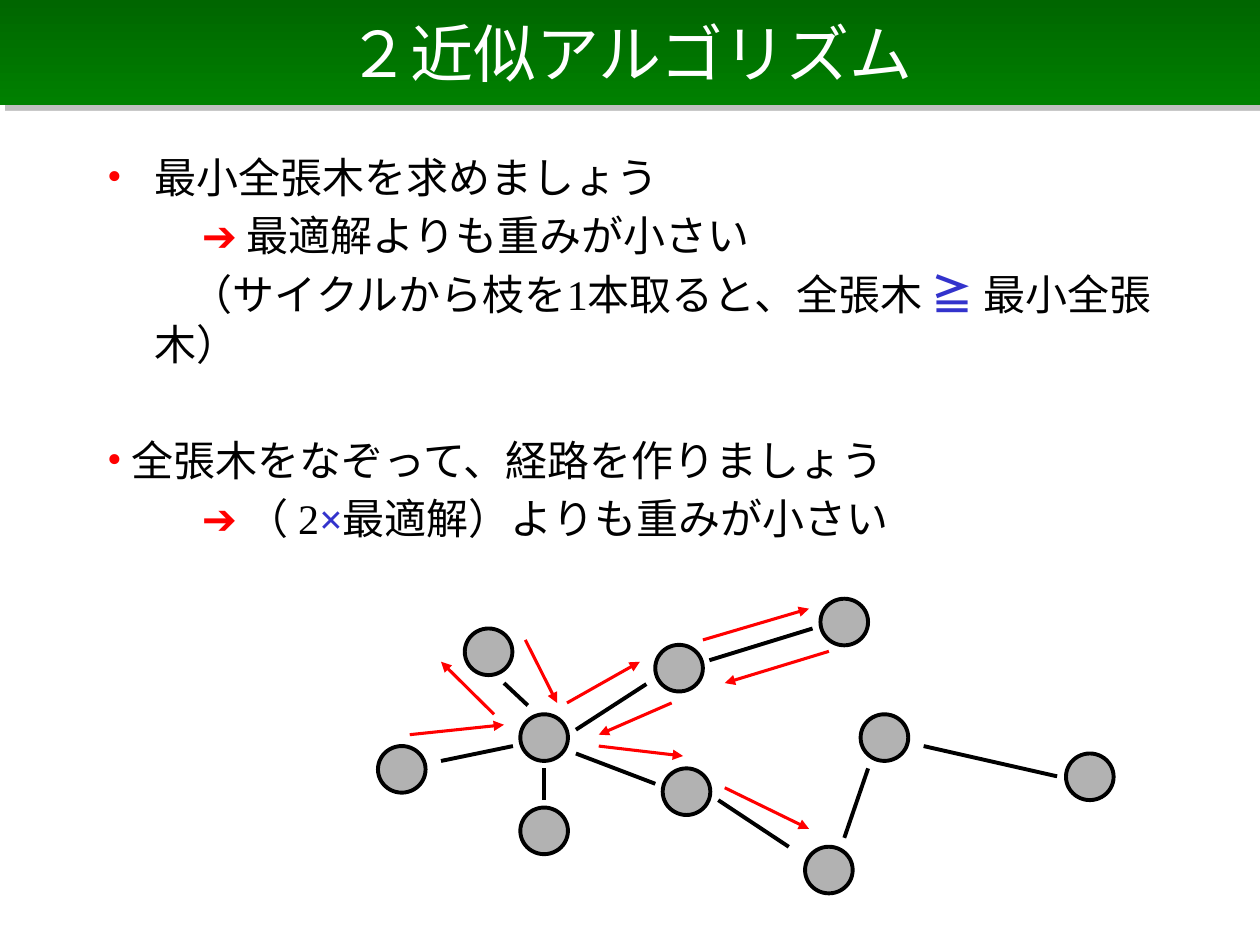
"""Build the slide explaining the 2-approximation by walking a minimum spanning tree."""
from dataclasses import dataclass

from lxml.etree import SubElement
from pptx import Presentation
from pptx.dml.color import RGBColor
from pptx.enum.shapes import MSO_CONNECTOR as Connector, MSO_SHAPE as Shape
from pptx.enum.text import MSO_ANCHOR as Anchor, PP_ALIGN as Align
from pptx.oxml.ns import qn
from pptx.util import Cm, Pt


@dataclass(frozen=True)
class Theme:
    font: str = "Times New Roman"
    title_size: float = 36
    body_size: float = 24
    white: RGBColor = RGBColor(0xFF, 0xFF, 0xFF)
    black: RGBColor = RGBColor(0, 0, 0)
    red: RGBColor = RGBColor(0xFF, 0, 0)
    blue: RGBColor = RGBColor(0x33, 0x33, 0xCC)
    grey: RGBColor = RGBColor(0xB2, 0xB2, 0xB2)
    shadow: RGBColor = RGBColor(0x80, 0x80, 0x80)
    dark_green: RGBColor = RGBColor(0, 0x66, 0)
    green: RGBColor = RGBColor(0, 0x80, 0)


theme = Theme()


def write(paragraph, text, size=theme.body_size, color=theme.black, bold=False):
    run = paragraph.add_run()
    run.text = text
    run.font.name = theme.font
    run.font.size = Pt(size)
    run.font.bold = bold
    run.font.color.rgb = color


deck = Presentation()
deck.slide_width, deck.slide_height = Cm(25.4), Cm(19.05)
slide = deck.slides.add_slide(deck.slide_layouts[6])

banner = slide.shapes.add_shape(Shape.RECTANGLE, Cm(0), Cm(0), deck.slide_width, Cm(2.12))
banner.line.fill.background()
banner.fill.gradient()
banner.fill.gradient_angle = 270
for stop, color in zip(banner.fill.gradient_stops, (theme.dark_green, theme.green)):
    stop.color.rgb = color
banner.shadow.inherit = False
effects = banner._element.spPr.find(qn("a:effectLst"))
outer_shadow = SubElement(effects, qn("a:outerShdw"), dist=str(Pt(4.2)), dir="2700000", algn="ctr", rotWithShape="0")
shadow_color = SubElement(outer_shadow, qn("a:srgbClr"), val=str(theme.shadow))
SubElement(shadow_color, qn("a:alpha"), val="50000")
banner.text_frame.vertical_anchor = Anchor.MIDDLE
heading = banner.text_frame.paragraphs[0]
heading.alignment = Align.CENTER
write(heading, "２近似アルゴリズム", size=theme.title_size, color=theme.white)

red_mark = {"color": theme.red, "bold": True}
blue_mark = {"color": theme.blue, "bold": True}
argument = [
    (0.96, -0.96, 4.8, "•", [("最小全張木を求めましょう", {})]),
    (1.91, 0, 4.8, None, [("➔ ", red_mark), ("最適解よりも重みが小さい", {})]),
    (0.96, 0.73, 4.8, None, [
        ("（サイクルから枝を1本取ると、全張木 ", {}), ("≧ ", blue_mark), ("最小全張木）", {})]),
    (0.5, -0.5, 37, "•", [("全張木をなぞって、経路を作りましょう", {})]),
    (1.91, 0, 4.8, None, [
        ("➔ ", red_mark), ("（ 2", {}), ("×", blue_mark), ("最適解）よりも重みが小さい", {})]),
]
body = slide.shapes.add_textbox(Cm(1.91), Cm(2.92), Cm(21.79), Cm(9.09)).text_frame
body.word_wrap = True
for index, (margin, indent, space_before, bullet, pieces) in enumerate(argument):
    step = body.add_paragraph() if index else body.paragraphs[0]
    step.space_before = Pt(space_before)
    layout = step._p.get_or_add_pPr()
    layout.set("marL", str(Cm(margin)))
    layout.set("indent", str(Cm(indent)))
    if bullet:
        SubElement(SubElement(layout, qn("a:buClr")), qn("a:srgbClr"), val=str(theme.red))
        SubElement(layout, qn("a:buFont"), typeface=theme.font)
        SubElement(layout, qn("a:buChar"), char=bullet)
    for text, style in pieces:
        write(step, text, **style)

vertices = [
    (13.21, 13), (13.36, 15.49), (16.23, 17.07), (17.35, 14.4), (16.54, 12.07),
    (7.62, 15.04), (21.49, 15.19), (9.37, 12.67), (10.49, 14.4), (10.49, 16.28),
]
vertex_group = slide.shapes.add_group_shape()
for left, top in vertices:
    vertex = vertex_group.shapes.add_shape(Shape.OVAL, Cm(left), Cm(top), Cm(0.96), Cm(0.94))
    vertex.shadow.inherit = False
    vertex.fill.solid()
    vertex.fill.fore_color.rgb = theme.grey
    vertex.line.color.rgb = theme.black
    vertex.line.width = Pt(2.25)

tree_edges = [
    (11.61, 14.71, 13.03, 13.79), (11.61, 15.19, 13.21, 15.8), (14.3, 13.31, 16.38, 12.67),
    (14.48, 16.13, 15.9, 17.07), (18.62, 15.04, 21.31, 15.65), (8.89, 15.34, 10.34, 15.04),
    (17.5, 15.49, 17.02, 16.89), (10.97, 16.13, 10.97, 15.49), (10.64, 14.22, 10.16, 13.77),
]
tour_steps = [
    (8.26, 14.81, 10.16, 14.61), (9.96, 14.4, 8.89, 13.34), (10.59, 12.9, 11.23, 14.17),
    (11.43, 14.17, 12.9, 13.34), (14.17, 12.9, 16.31, 12.27), (16.71, 13.13, 14.61, 13.77),
    (13.54, 14.17, 12.07, 14.81), (12.07, 15.04, 13.77, 15.24), (14.61, 15.88, 16.31, 16.71),
]
for segments, color, width, directed in (
    (tree_edges, theme.black, 2.25, False),
    (tour_steps, theme.red, 1.75, True),
):
    segment_group = slide.shapes.add_group_shape()
    for ends in segments:
        segment = segment_group.shapes.add_connector(Connector.STRAIGHT, *map(Cm, ends))
        segment.line.color.rgb = color
        segment.line.width = Pt(width)
        if directed:
            SubElement(segment.line._get_or_add_ln(), qn("a:tailEnd"), type="triangle")
        SubElement(segment._element.spPr, qn("a:effectLst"))

deck.save("out.pptx")
